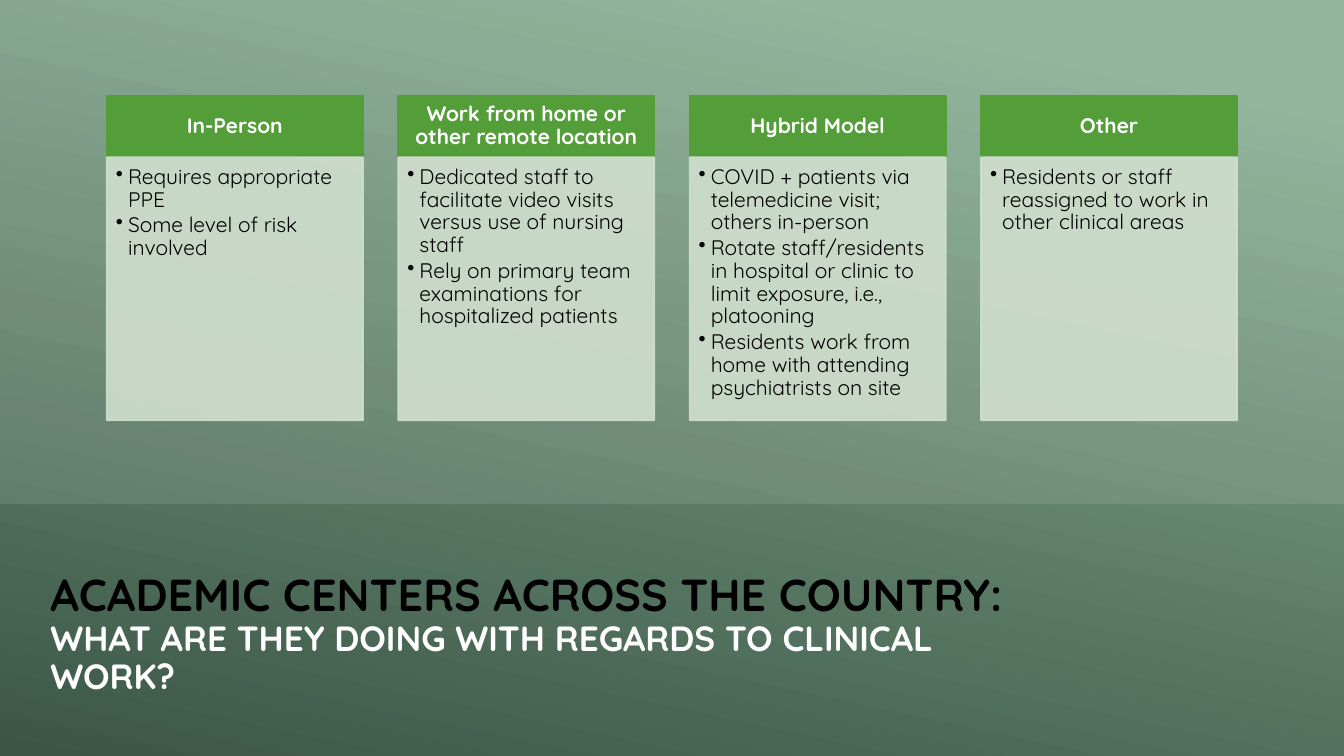
from lxml import etree
from pptx import Presentation
from pptx.dml.color import RGBColor
from pptx.enum.shapes import MSO_SHAPE
from pptx.enum.text import MSO_ANCHOR, MSO_AUTO_SIZE, PP_ALIGN
from pptx.oxml.ns import qn
from pptx.util import Inches, Pt

RECT, SNIP = MSO_SHAPE.RECTANGLE, MSO_SHAPE.SNIP_2_DIAG_RECTANGLE
TOP, MIDDLE = MSO_ANCHOR.TOP, MSO_ANCHOR.MIDDLE
LEFT, CENTER = PP_ALIGN.LEFT, PP_ALIGN.CENTER
NO_FIT = MSO_AUTO_SIZE.NONE
FONT = "Quicksand"
WHITE, BLACK, GREEN, PALE = "FFFFFF", "000000", "549E39", "D1DFCE"
WIDE, HIGH = 13.33, 7.5

HEAD = {"size": 15, "bold": True, "color": WHITE, "align": CENTER,
        "anchor": MIDDLE, "insets": (0.12, 0.07, 0.12, 0.07), "after": 0}
BODY = {"size": 15, "bold": False, "color": BLACK, "align": LEFT,
        "anchor": TOP, "insets": (0.09, 0.09, 0.12, 0.13), "after": 2.25}

CARDS = [
    ("In-Person", ["Requires appropriate PPE", "Some level of risk involved"]),
    ("Work from home or other remote location", [
        "Dedicated staff to facilitate video visits versus use of nursing staff",
        "Rely on primary team examinations for hospitalized patients"]),
    ("Hybrid Model", [
        "COVID + patients via telemedicine visit; others in-person",
        "Rotate staff/residents in hospital or clinic to limit exposure, i.e., platooning",
        "Residents work from home with attending psychiatrists on site"]),
    ("Other", ["Residents or staff reassigned to work in other clinical areas"]),
]


def rgb(color):
    return RGBColor.from_string(color)


def fade(fill, alpha):
    """Set the opacity, in percent, of a solid fill element."""
    etree.SubElement(fill[0], qn("a:alpha"), val=str(alpha * 1000))


def style(font, size, bold, color):
    values = {"name": FONT, "size": Pt(size), "bold": bold}
    for name, value in values.items():
        setattr(font, name, value)
    font.color.rgb = rgb(color)


def panel(slide, box, color=None, alpha=None, kind=RECT, line=None):
    """Add a flat shape; alpha applies to its fill and line."""
    shape = slide.shapes.add_shape(kind, *map(Inches, box))
    shape.shadow.inherit = False
    if line:
        shape.line.color.rgb = rgb(line)
        shape.line.width = Pt(1.25)
    else:
        shape.line.fill.background()
    if color:
        shape.fill.solid()
        shape.fill.fore_color.rgb = rgb(color)
    if alpha:
        for fill in shape._element.spPr.iter(qn("a:solidFill")):
            fade(fill, alpha)
    return shape


def set_frame(frame, anchor, insets):
    sides = ("margin_left", "margin_top", "margin_right", "margin_bottom")
    values = dict(zip(sides, map(Inches, insets)))
    values |= {"word_wrap": True, "auto_size": NO_FIT, "vertical_anchor": anchor}
    for name, value in values.items():
        setattr(frame, name, value)


def add_bullet(para):
    props = para._p.get_or_add_pPr()
    props.set("marL", str(Inches(0.12)))
    props.set("indent", str(-Inches(0.12)))
    etree.SubElement(props, qn("a:buChar"), char="•")


def write(shape, lines, look, bullets=False):
    frame = shape.text_frame
    set_frame(frame, look["anchor"], look["insets"])
    for i, line in enumerate(lines):
        para = frame.add_paragraph() if i else frame.paragraphs[0]
        para.alignment = look["align"]
        para.line_spacing = 0.9
        para.space_after = Pt(look["after"])
        if bullets:
            add_bullet(para)
        run = para.add_run()
        run.text = line
        style(run.font, look["size"], look["bold"], look["color"])


def add_back(slide, box):
    back = panel(slide, box)
    back.fill.gradient()
    back.fill.gradient_angle = 258
    stops = ((0.1, "88AE92"), (1, "3B5647"))
    for stop, (place, color) in zip(back.fill.gradient_stops, stops):
        stop.position = place
        stop.color.rgb = rgb(color)
    # Keep the backdrop behind the title placeholder.
    slide.shapes._spTree.insert(2, back._element)


def add_title(slide, box):
    title = slide.shapes.title
    title.left, title.top, title.width, title.height = map(Inches, box)
    set_frame(title.text_frame, MIDDLE, (0.1, 0.05, 0.1, 0.05))
    para = title.text_frame.paragraphs[0]
    para.alignment = LEFT
    para.line_spacing = 0.9
    first, second = para.add_run(), None
    first.text = "ACADEMIC CENTERS ACROSS THE COUNTRY:"
    para.add_line_break()
    second = para.add_run()
    second.text = "WHAT ARE THEY DOING WITH REGARDS TO CLINICAL WORK?"
    style(first.font, 32, True, BLACK)
    style(second.font, 25, True, WHITE)


def add_card(slide, box, name, points):
    left, top, width, height = box
    bar = 0.61
    head = panel(slide, (left, top, width, bar), GREEN, line=GREEN)
    write(head, [name], HEAD)
    body = panel(slide, (left, top + bar, width, height - bar), PALE, 90, line=PALE)
    write(body, points, BODY, bullets=True)


def add_cards(slide, box):
    left, top, width, height = box
    gap = 0.35
    each = (width - gap * (len(CARDS) - 1)) / len(CARDS)
    for i, (name, points) in enumerate(CARDS):
        add_card(slide, (left + i * (each + gap), top, each, height), name, points)


def main():
    deck = Presentation()
    deck.slide_width, deck.slide_height = Inches(WIDE), Inches(HIGH)
    slide = deck.slides.add_slide(deck.slide_layouts[5])
    add_back(slide, (0, 0, WIDE, HIGH))
    add_title(slide, (0.4, 5.67, 10.14, 1.26))
    veil = panel(slide, (0, 0, WIDE, 5), WHITE, 10, SNIP)
    for i in range(2):
        veil.adjustments[i] = 0
    add_cards(slide, (1.06, 0.95, 11.21, 3.22))
    deck.save("out.pptx")


if __name__ == "__main__":
    main()
